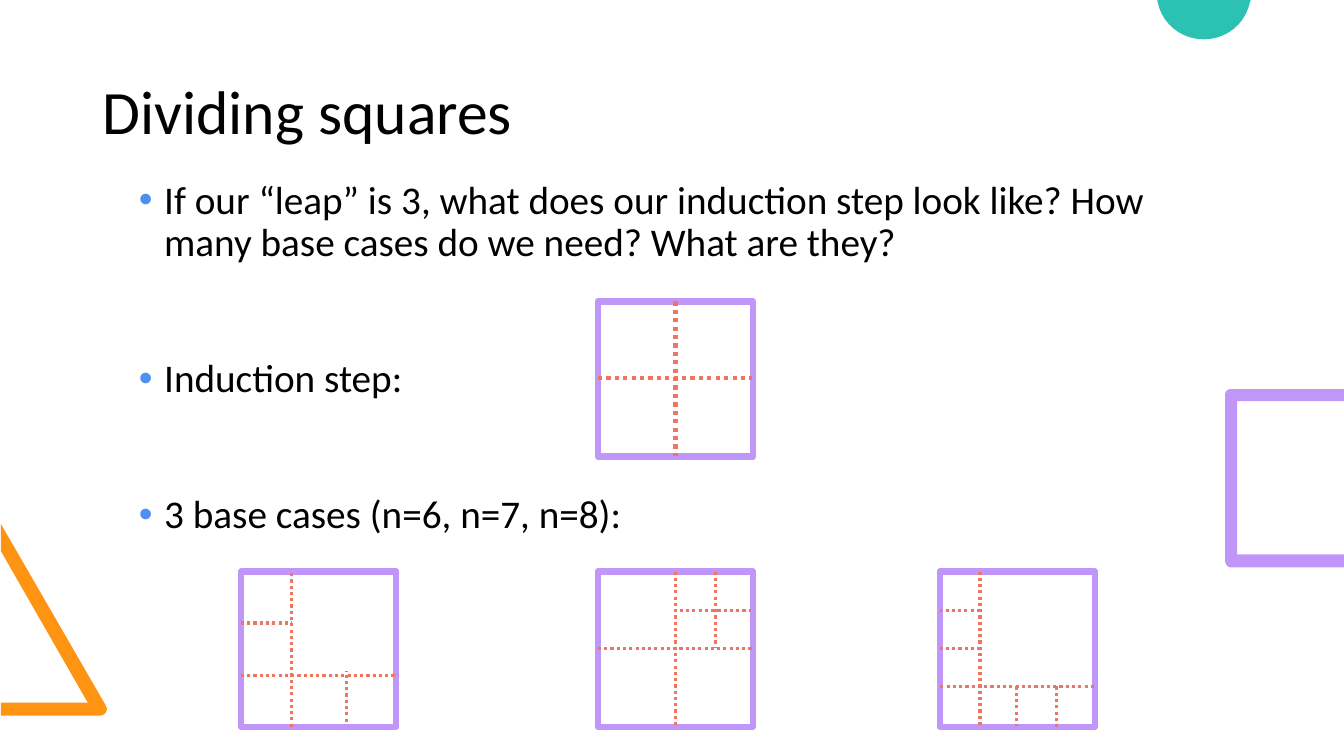
from lxml import etree
from pptx import Presentation
from pptx.dml.color import RGBColor
from pptx.enum.dml import MSO_LINE
from pptx.enum.shapes import MSO_CONNECTOR, MSO_SHAPE
from pptx.enum.text import MSO_ANCHOR
from pptx.oxml.ns import qn
from pptx.util import Inches, Pt

RECT, STRAIGHT = MSO_SHAPE.RECTANGLE, MSO_CONNECTOR.STRAIGHT
DOTS = MSO_LINE.ROUND_DOT
FONT = "Calibri"
COLORS = {"text": "000000", "bullet": "4D90EF", "paper": "FFFFFF", "purple": "C097F8",
          "cut": "EE7660", "orange": "FF9413", "teal": "2BC2B4"}

TITLE = "Dividing squares"
# text, space before in points
BULLETS = [
    ("If our “leap” is 3, what does our induction step look like? "
     "How many base cases do we need? What are they?", 10),
    ("Induction step:", 59),
    ("3 base cases (n=6, n=7, n=8):", 59),
]

# Outlines in inches: pairs are corners, sextuples are Bézier curves
DECORATIONS = [
    ("orange", [(0.01, 7.1), (0.01, 6.97), (0.87, 6.97), (0.01, 5.47), (0.01, 5.2), (1.05, 7),
                (1.05, 7.01, 1.06, 7.02, 1.06, 7.03), (1.06, 7.07, 1.03, 7.1, 0.99, 7.1)]),
    ("teal", [(11.48, 0), (12.41, 0), (12.4, 0.01), (12.36, 0.23, 12.17, 0.39, 11.94, 0.39),
              (11.71, 0.39, 11.52, 0.23, 11.48, 0.01)]),
    ("purple", [(12.21, 5.63), (13.33, 5.63), (13.33, 5.5), (12.27, 5.5), (12.27, 3.98),
                (13.33, 3.98), (13.33, 3.86), (12.21, 3.86),
                (12.18, 3.86, 12.15, 3.88, 12.15, 3.92), (12.15, 5.56),
                (12.15, 5.6, 12.18, 5.63, 12.21, 5.63)]),
]

SIDE = 1.54
STEP_TOP, BASE_TOP = 2.99, 5.67
# left, top, cut width in points, cuts as x1, y1, x2, y2 from the square's corner
SQUARES = [
    (5.93, STEP_TOP, 3, [(0, 0.76, 1.53, 0.76), (0.77, 0, 0.77, 1.53)]),
    (5.93, BASE_TOP, 2.25, [(0, 0.76, 1.53, 0.76), (0.77, 0, 0.77, 1.53),
                            (1.17, 0, 1.17, 0.76), (0.75, 0.39, 1.52, 0.39)]),
    (2.39, BASE_TOP, 2.25, [(0, 1.03, 1.54, 1.03), (0.5, 1.54, 0.5, 0.01),
                            (0, 0.51, 0.5, 0.51), (1.05, 1.49, 1.05, 0.99)]),
    (9.32, BASE_TOP, 2.25, [(0, 0.76, 0.4, 0.76), (0.76, 1.14, 0.76, 1.53),
                            (0.4, 0, 0.4, 1.53), (1.53, 1.14, 0, 1.14),
                            (1.16, 1.14, 1.16, 1.54), (0.4, 0.39, 0, 0.39)]),
]


def rgb(name):
    return RGBColor.from_string(COLORS[name])


def flatten(outline, steps=10):
    """Turn corners and Bézier curves into a list of EMU points."""
    points = []
    for part in outline:
        if len(part) == 2:
            points.append(part)
            continue
        nodes = [points[-1], part[:2], part[2:4], part[4:]]
        for i in range(1, steps + 1):
            t = i / steps
            weights = ((1 - t) ** 3, 3 * t * (1 - t) ** 2, 3 * t * t * (1 - t), t ** 3)
            points.append(tuple(sum(w * n[axis] for w, n in zip(weights, nodes))
                                for axis in (0, 1)))
    return [(Inches(x), Inches(y)) for x, y in points]


def add_decoration(shapes, color, outline):
    start, *rest = flatten(outline)
    builder = shapes.build_freeform(*start)
    builder.add_line_segments(rest, close=True)
    s = builder.convert_to_shape()
    s.shadow.inherit = False
    s.fill.solid()
    s.fill.fore_color.rgb = rgb(color)
    s.line.fill.background()


def add_text(shapes, box, size, paragraphs, **frame_format):
    tf = shapes.add_textbox(*map(Inches, box)).text_frame
    tf.word_wrap = True
    for name, value in frame_format.items():
        setattr(tf, name, value)
    for i, (text, before) in enumerate(paragraphs):
        p = tf.add_paragraph() if i else tf.paragraphs[0]
        p.line_spacing = 0.9
        p.space_before = Pt(before)
        r = p.add_run()
        r.text = text
        for name, value in {"name": FONT, "size": Pt(size)}.items():
            setattr(r.font, name, value)
        r.font.color.rgb = rgb("text")
    return tf


def add_bullet(p):
    p.space_after = Pt(8)
    pPr = p._p.get_or_add_pPr()
    pPr.set("marL", str(Inches(0.25)))
    pPr.set("indent", str(Inches(-0.25)))
    color = etree.SubElement(pPr, qn("a:buClr"))
    etree.SubElement(color, qn("a:srgbClr"), val=COLORS["bullet"])
    etree.SubElement(pPr, qn("a:buFont"), typeface="Arial")
    etree.SubElement(pPr, qn("a:buChar"), char="•")


def add_square(shapes, left, top, cut_width, cuts):
    group = shapes.add_group_shape().shapes
    s = group.add_shape(RECT, *map(Inches, (left, top, SIDE, SIDE)))
    s.shadow.inherit = False
    s.fill.solid()
    s.fill.fore_color.rgb = rgb("paper")
    s.line.color.rgb = rgb("purple")
    s.line.width = Pt(4.5)
    for x1, y1, x2, y2 in cuts:
        ends = (left + x1, top + y1, left + x2, top + y2)
        cut = group.add_connector(STRAIGHT, *map(Inches, ends))
        cut.line.color.rgb = rgb("cut")
        cut.line.width = Pt(cut_width)
        cut.line.dash_style = DOTS
        etree.SubElement(cut._element.spPr, qn("a:effectLst"))


def main():
    prs = Presentation()
    prs.slide_width, prs.slide_height = Inches(13.33), Inches(7.5)
    shapes = prs.slides.add_slide(prs.slide_layouts[6]).shapes
    for color, outline in DECORATIONS:
        add_decoration(shapes, color, outline)
    add_text(shapes, (0.92, 0.33, 11.5, 1.61), 44, [(TITLE, 0)],
             vertical_anchor=MSO_ANCHOR.MIDDLE)
    body = add_text(shapes, (1.28, 1.74, 10.58, 5.58), 28, BULLETS)
    for p in body.paragraphs:
        add_bullet(p)
    for square in SQUARES:
        add_square(shapes, *square)
    prs.save("out.pptx")


if __name__ == "__main__":
    main()
